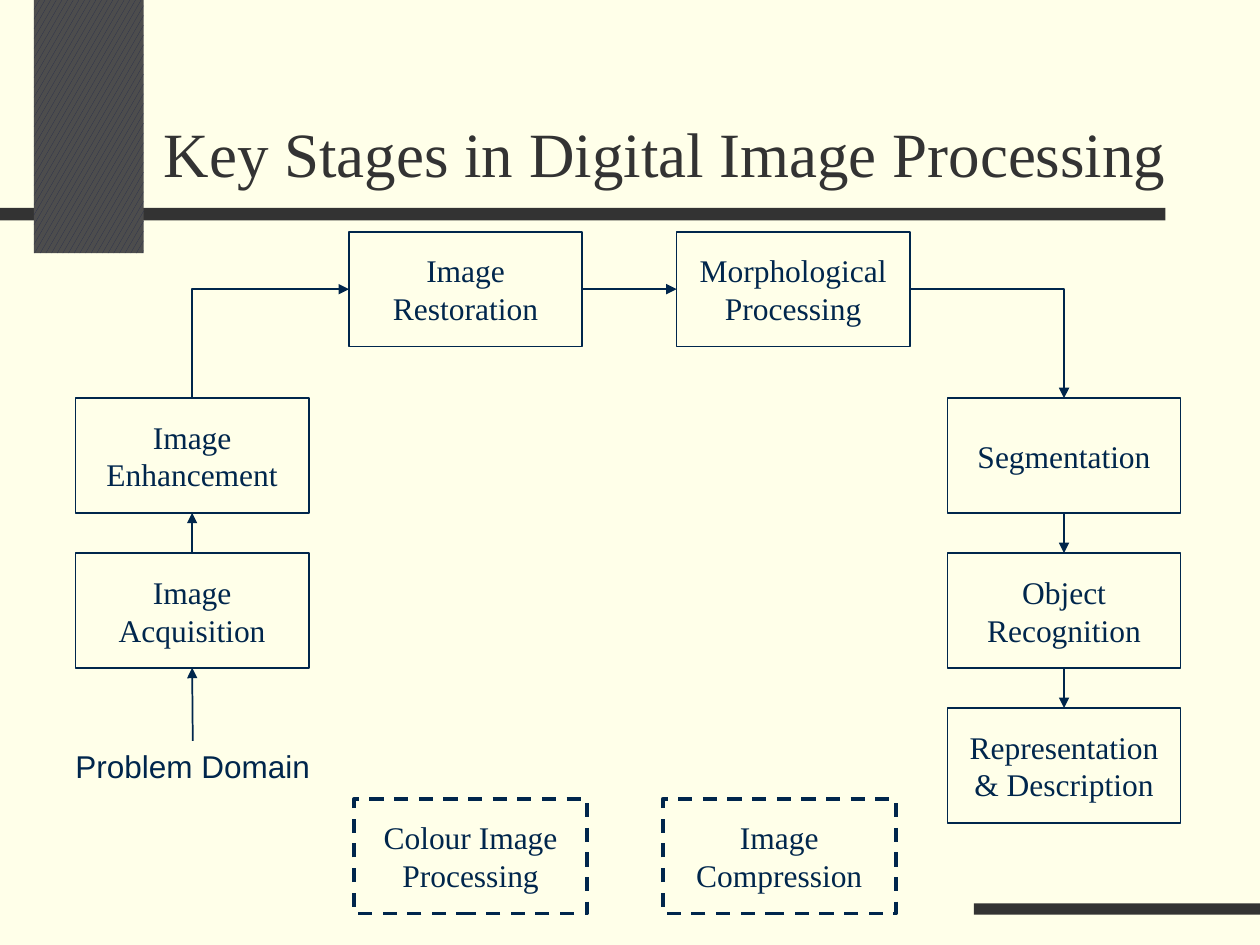
from lxml.etree import SubElement
from pptx import Presentation
from pptx.dml.color import RGBColor
from pptx.enum.dml import MSO_LINE, MSO_PATTERN
from pptx.enum.shapes import MSO_CONNECTOR, MSO_SHAPE
from pptx.enum.text import MSO_ANCHOR, MSO_AUTO_SIZE, PP_ALIGN
from pptx.oxml.ns import qn
from pptx.util import Inches, Pt

COLORS = {"paper": "FFFFE9", "ink": "00264C", "bar": "333333",
          "hatch": "262D4C", "block": "4D4D4D"}
SERIF, SANS = "Times New Roman", "Arial"
BOX_WIDTH, BOX_HEIGHT = 1.85, 0.91
COLUMNS = {"left": 0.6, "inner left": 2.77, "inner right": 5.37, "right": 7.52,
           "extra left": 2.81, "extra right": 5.26}
LOWER_TOP, ROW_STEP = 3.16, 1.23
ROWS = [1.84] + [LOWER_TOP + ROW_STEP * step for step in range(3)] + [6.34]
TOP, LEFT, BOTTOM, RIGHT = range(4)

STAGES = [
    ("Image Acquisition", "left", 2),
    ("Image Enhancement", "left", 1),
    ("Image Restoration", "inner left", 0),
    ("Morphological Processing", "inner right", 0),
    ("Segmentation", "right", 1),
    ("Object Recognition", "right", 2),
    ("Representation & Description", "right", 3),
]
EXTRAS = [("Colour Image Processing", "extra left", 4),
          ("Image Compression", "extra right", 4)]
# Sides left and entered by each arrow, following the order of the stages
ROUTE = [(TOP, BOTTOM), (TOP, BOTTOM), (TOP, LEFT), (RIGHT, LEFT),
         (RIGHT, TOP), (BOTTOM, TOP), (BOTTOM, TOP)]


def color(name):
    return RGBColor.from_string(COLORS[name])


def style_text(paragraph, size, font, ink, align):
    paragraph.alignment = align
    for span in paragraph.runs:
        span.font.size = Pt(size)
        span.font.name = font
        span.font.color.rgb = color(ink)


def add_block(page, left, top, width, height):
    block = page.shapes.add_shape(MSO_SHAPE.RECTANGLE, Inches(left), Inches(top),
                                  Inches(width), Inches(height))
    block.shadow.inherit = False
    block.line.fill.background()
    return block


def add_decoration(page):
    for bar in [(0, 1.65, 9.25, 0.1), (7.73, 7.17, 2.27, 0.09)]:
        fill = add_block(page, *bar).fill
        fill.solid()
        fill.fore_color.rgb = color("bar")
    fill = add_block(page, 0.27, 0, 0.87, 2.01).fill
    fill.patterned()
    fill.pattern = MSO_PATTERN.LARGE_CONFETTI
    fill.fore_color.rgb = color("hatch")
    fill.back_color.rgb = color("block")


def format_title(page, text):
    title = page.shapes.title
    title.left, title.top = Inches(1.2), Inches(0.31)
    title.width, title.height = Inches(8.5), Inches(1.25)
    frame = title.text_frame
    frame.text = text
    frame.auto_size = MSO_AUTO_SIZE.NONE
    frame.vertical_anchor = MSO_ANCHOR.BOTTOM
    style_text(frame.paragraphs[0], 36, SERIF, "bar", PP_ALIGN.LEFT)


def add_stage(page, text, column, row, dashed=False):
    box = add_block(page, COLUMNS[column], ROWS[row], BOX_WIDTH, BOX_HEIGHT)
    box.fill.solid()
    box.fill.fore_color.rgb = color("paper")
    box.line.color.rgb = color("ink")
    box.line.width = Pt(2 if dashed else 1)
    if dashed:
        box.line.dash_style = MSO_LINE.DASH
    frame = box.text_frame
    frame.text = text
    frame.word_wrap = True
    frame.vertical_anchor = MSO_ANCHOR.MIDDLE
    style_text(frame.paragraphs[0], 18, SERIF, "ink", PP_ALIGN.CENTER)
    return box


def add_label(page, text):
    label = page.shapes.add_textbox(Inches(0.5), Inches(5.88),
                                    Inches(2.06), Inches(0.4))
    frame = label.text_frame
    frame.text = text
    frame.word_wrap = False
    frame.auto_size = MSO_AUTO_SIZE.SHAPE_TO_FIT_TEXT
    style_text(frame.paragraphs[0], 18, SANS, "ink", PP_ALIGN.LEFT)
    return label


def bend_once(connector, upward):
    """Give the connector a single corner; an upward one rises, then runs right."""
    properties = connector._element.spPr
    properties.find(qn("a:prstGeom")).set("prst", "bentConnector2")
    if upward:
        left, top = connector.left, connector.top
        width, height = connector.width, connector.height
        shift = (width - height) // 2
        connector.left, connector.top = left + shift, top - shift
        connector.width, connector.height = height, width
        transform = properties.find(qn("a:xfrm"))
        transform.attrib.pop("flipV", None)
        transform.set("rot", str(270 * 60000))


def add_arrow(page, source, source_side, target, target_side):
    bent = (source_side - target_side) % 2 == 1
    kind = MSO_CONNECTOR.ELBOW if bent else MSO_CONNECTOR.STRAIGHT
    arrow = page.shapes.add_connector(kind, 0, 0, 0, 0)
    arrow.begin_connect(source, source_side)
    arrow.end_connect(target, target_side)
    if bent:
        bend_once(arrow, upward=source_side == TOP)
    arrow.line.color.rgb = color("ink")
    arrow.line.width = Pt(1)
    SubElement(arrow.line._get_or_add_ln(), qn("a:tailEnd"), type="triangle")
    SubElement(arrow._element.spPr, qn("a:effectLst"))


def main():
    deck = Presentation()
    deck.slide_width, deck.slide_height = Inches(10), Inches(7.5)
    page = deck.slides.add_slide(deck.slide_layouts[5])
    page.background.fill.solid()
    page.background.fill.fore_color.rgb = color("paper")

    add_decoration(page)
    format_title(page, "Key Stages in Digital Image Processing")
    flow = [add_label(page, "Problem Domain")]
    flow += [add_stage(page, *stage) for stage in STAGES]
    for source, target, (leaving, entering) in zip(flow, flow[1:], ROUTE):
        add_arrow(page, source, leaving, target, entering)
    for extra in EXTRAS:
        add_stage(page, *extra, dashed=True)
    deck.save("out.pptx")


if __name__ == "__main__":
    main()
